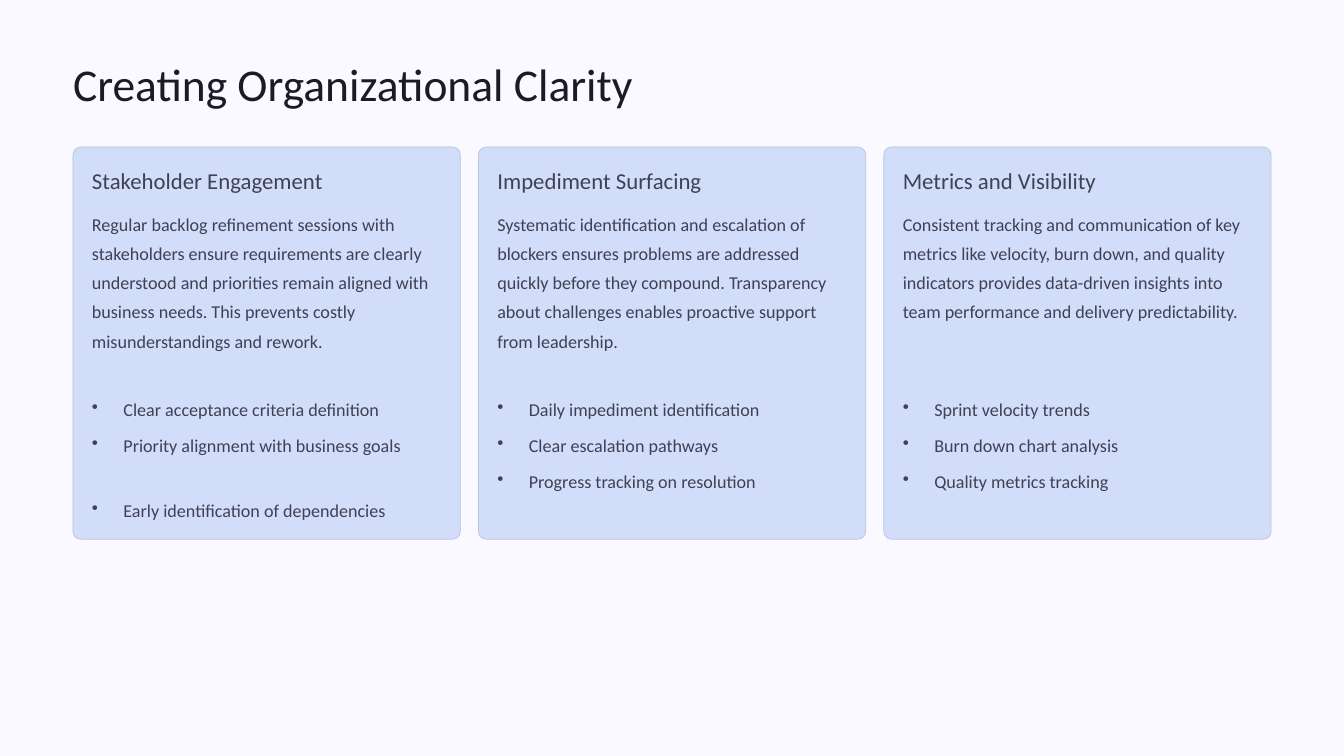
from pptx import Presentation
from pptx.dml.color import RGBColor
from pptx.enum.shapes import MSO_SHAPE
from pptx.oxml.xmlchemy import OxmlElement
from pptx.util import Pt

ROUNDED = MSO_SHAPE.ROUNDED_RECTANGLE
FONT = "Calibri"
BACKGROUND = RGBColor(0xF9, 0xF9, 0xFF)
TITLE_COLOR = RGBColor(0x1B, 0x1B, 0x27)
TEXT_COLOR = RGBColor(0x40, 0x41, 0x55)
CARD_FILL = RGBColor(0xD2, 0xDD, 0xF9)
CARD_LINE = RGBColor(0xB8, 0xC3, 0xDF)

MARGIN = 62.6
CARD_TOP, CARD_WIDTH, CARD_HEIGHT, CARD_GAP = 126, 332, 336.2, 15.5
PADDING = 16.2
BULLET_INDENT = 27
BULLET_GAP = 5.6
WIDE_BULLET_GAP = 30.4

# Heading, body, bullets, and the space before each bullet
CARDS = [
    (
        "Stakeholder Engagement",
        "Regular backlog refinement sessions with stakeholders ensure requirements "
        "are clearly understood and priorities remain aligned with business needs. "
        "This prevents costly misunderstandings and rework.",
        ["Clear acceptance criteria definition",
         "Priority alignment with business goals",
         "Early identification of dependencies"],
        [0, BULLET_GAP, WIDE_BULLET_GAP],
    ),
    (
        "Impediment Surfacing",
        "Systematic identification and escalation of blockers ensures problems are "
        "addressed quickly before they compound. Transparency about challenges "
        "enables proactive support from leadership.",
        ["Daily impediment identification",
         "Clear escalation pathways",
         "Progress tracking on resolution"],
        [0, BULLET_GAP, BULLET_GAP],
    ),
    (
        "Metrics and Visibility",
        "Consistent tracking and communication of key metrics like velocity, burn "
        "down, and quality indicators provides data-driven insights into team "
        "performance and delivery predictability.",
        ["Sprint velocity trends",
         "Burn down chart analysis",
         "Quality metrics tracking"],
        [0, BULLET_GAP, BULLET_GAP],
    ),
]


def add_bullet(para):
    properties = para._p.get_or_add_pPr()
    properties.set("marL", str(Pt(BULLET_INDENT)))
    properties.set("indent", str(-Pt(BULLET_INDENT)))
    bullet = OxmlElement("a:buChar")
    bullet.set("char", "•")
    properties.append(bullet)


def add_text(slide, lines, left, top, width, height, size=15.5, leading=25,
             color=TEXT_COLOR, gaps=None, bulleted=False):
    """Add a text box with one paragraph per line; gaps are spaces before them."""
    box = slide.shapes.add_textbox(Pt(left), Pt(top), Pt(width), Pt(height))
    frame = box.text_frame
    frame.word_wrap = True
    frame.margin_left = frame.margin_right = 0
    frame.margin_top = frame.margin_bottom = 0
    for index, line in enumerate(lines):
        para = frame.add_paragraph() if index else frame.paragraphs[0]
        para.line_spacing = Pt(leading)
        if gaps:
            para.space_before = Pt(gaps[index])
        if bulleted:
            add_bullet(para)
        span = para.add_run()
        span.text = line
        span.font.name = FONT
        span.font.size = Pt(size)
        span.font.color.rgb = color


def add_card(slide, card, left, top, width, height):
    heading, body, bullets, gaps = card
    panel = slide.shapes.add_shape(ROUNDED, Pt(left), Pt(top), Pt(width), Pt(height))
    panel.adjustments[0] = 0.02
    panel.shadow.inherit = False
    panel.fill.solid()
    panel.fill.fore_color.rgb = CARD_FILL
    panel.line.color.rgb = CARD_LINE
    panel.line.width = Pt(0.6)

    text_left = left + PADDING
    text_width = width - 2 * PADDING
    add_text(slide, [heading], text_left, top + 16.5, text_width, 24.5,
             size=19.5, leading=24)
    add_text(slide, [body], text_left, top + 50.4, text_width, 150)
    add_text(slide, bullets, text_left, top + 209.5, text_width, 25 * 3 + sum(gaps),
             gaps=gaps, bulleted=True)


def add_clarity_slide(deck):
    slide = deck.slides.add_slide(deck.slide_layouts[6])
    slide.background.fill.solid()
    slide.background.fill.fore_color.rgb = BACKGROUND
    add_text(slide, ["Creating Organizational Clarity"], MARGIN, 46, 599, 49,
             size=39, leading=48.5, color=TITLE_COLOR)
    for column, card in enumerate(CARDS):
        left = MARGIN + column * (CARD_WIDTH + CARD_GAP)
        add_card(slide, card, left, CARD_TOP, CARD_WIDTH, CARD_HEIGHT)


def main():
    deck = Presentation()
    deck.slide_width, deck.slide_height = Pt(1152), Pt(648)
    add_clarity_slide(deck)
    deck.save("out.pptx")


if __name__ == "__main__":
    main()
